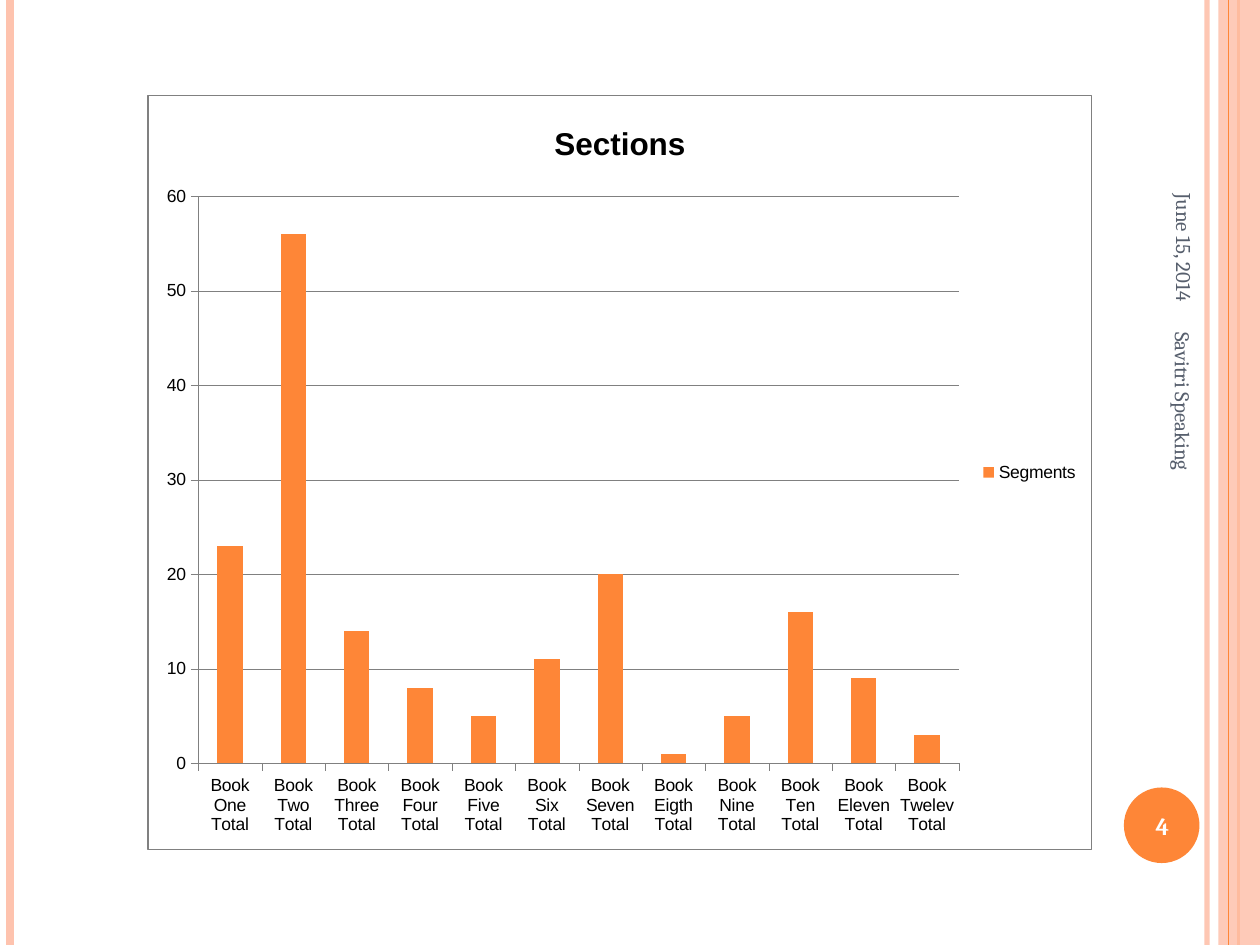
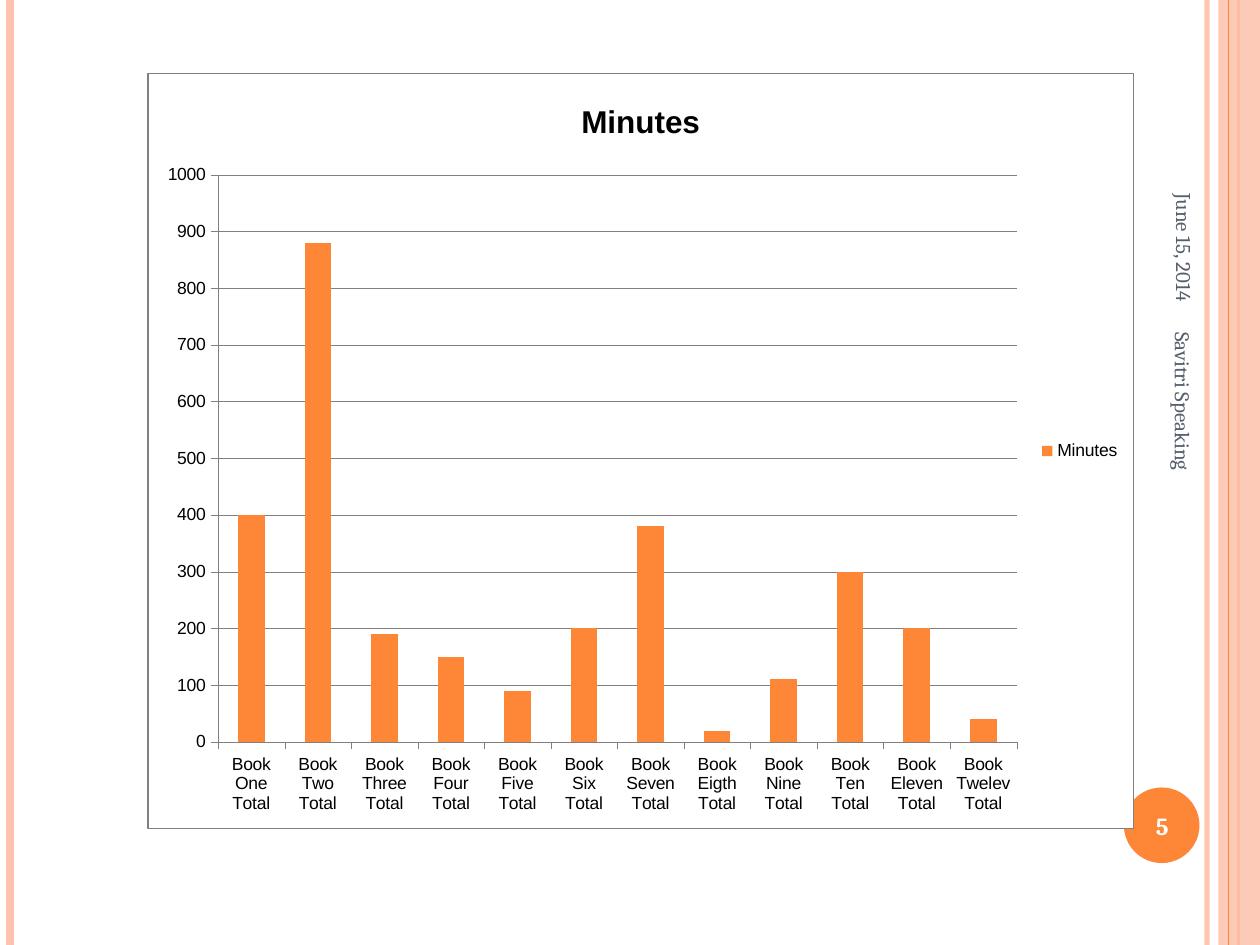
from dataclasses import dataclass

import lxml.etree
import pptx
import pptx.chart.data
import pptx.dml.color
import pptx.enum.chart
import pptx.enum.shapes
import pptx.enum.text
import pptx.oxml
import pptx.oxml.ns
import pptx.util

EMU_PER_PX = 9144
PAGE_WIDTH, PAGE_HEIGHT = 1000, 750


@dataclass(frozen=True)
class Theme:
    accent: str = "FE8637"
    band: str = "FEC3AE"
    muted: str = "575F6D"
    axis: str = "808080"
    white: str = "FFFFFF"
    black: str = "000000"
    text_font: str = "Cambria"
    chart_font: str = "Arial"
    footer_size: int = 12
    number_size: int = 14
    chart_size: int = 10
    chart_title_size: int = 18


THEME = Theme()
ALIGN = pptx.enum.text.PP_ALIGN
BOOKS = [f"Book {name} Total" for name in (
    "One", "Two", "Three", "Four", "Five", "Six",
    "Seven", "Eigth", "Nine", "Ten", "Eleven", "Twelev")]


def px(*lengths):
    return [pptx.util.Emu(length * EMU_PER_PX) for length in lengths]


def rgb(color):
    return pptx.dml.color.RGBColor.from_string(color)


def style_font(font, name, size, color, bold=False):
    font.name = name
    font.size = pptx.util.Pt(size)
    font.bold = bold
    font.color.rgb = rgb(color)


def style_line(line, color, width):
    line.color.rgb = rgb(color)
    line.width = pptx.util.Pt(width)


def set_opacity(properties, percent):
    color = properties.find(".//" + pptx.oxml.ns.qn("a:srgbClr"))
    alpha = lxml.etree.SubElement(color, pptx.oxml.ns.qn("a:alpha"))
    alpha.set("val", str(percent * 1000))


def add_stripe(page, x, color, width, opacity=100):
    stripe = page.shapes.add_connector(
        pptx.enum.shapes.MSO_CONNECTOR.STRAIGHT, *px(x, 0, x, PAGE_HEIGHT))
    style_line(stripe.line, color, width)
    properties = stripe._element.spPr
    if opacity < 100:
        set_opacity(properties, opacity)
    lxml.etree.SubElement(properties, pptx.oxml.ns.qn("a:effectLst"))


def add_filled_shape(page, kind, bounds, color, opacity=100):
    shape = page.shapes.add_shape(kind, *px(*bounds))
    shape.shadow.inherit = False
    shape.fill.solid()
    shape.fill.fore_color.rgb = rgb(color)
    shape.line.fill.background()
    if opacity < 100:
        set_opacity(shape._element.spPr, opacity)


def add_label(page, bounds, text, size, color, align, bold=False, rotation=0):
    box = page.shapes.add_textbox(*px(*bounds))
    box.rotation = rotation
    frame = box.text_frame
    frame.word_wrap = True
    frame.vertical_anchor = pptx.enum.text.MSO_ANCHOR.MIDDLE
    frame.text = text
    para = frame.paragraphs[0]
    para.alignment = align
    style_font(para.runs[0].font, THEME.text_font, size, color, bold)


def add_decoration(page):
    shapes = pptx.enum.shapes.MSO_SHAPE
    add_stripe(page, 958, THEME.band, 3, opacity=93)
    add_stripe(page, 8, THEME.band, 4.5)
    add_stripe(page, 983, THEME.accent, 1.5)
    add_filled_shape(page, shapes.RECTANGLE, (967, 0, 33, PAGE_HEIGHT), THEME.band, opacity=87)
    add_stripe(page, 975, THEME.accent, 0.75)
    add_filled_shape(page, shapes.OVAL, (892, 625, 60, 60), THEME.accent)


def add_footer(page, number):
    add_label(page, (830, 118, 220, 42), "June 15, 2014", THEME.footer_size,
              THEME.muted, ALIGN.RIGHT, rotation=90)
    add_label(page, (889, 627, 67, 57), str(number), THEME.number_size,
              THEME.white, ALIGN.CENTER, bold=True)
    add_label(page, (764, 409, 350, 40), "Savitri Speaking", THEME.footer_size,
              THEME.muted, ALIGN.LEFT, rotation=90)


def area_properties(outline):
    return pptx.oxml.parse_xml(
        f'<c:spPr {pptx.oxml.ns.nsdecls("c", "a")}><a:solidFill>'
        f'<a:srgbClr val="{THEME.white}"/></a:solidFill>{outline}</c:spPr>')


def paint_chart_areas(chart):
    border = (f'<a:ln w="{pptx.util.Pt(0.75)}"><a:solidFill>'
              f'<a:srgbClr val="{THEME.axis}"/></a:solidFill></a:ln>')
    body = chart._chartSpace.chart
    body.addnext(area_properties(border))
    body.plotArea.append(area_properties("<a:ln><a:noFill/></a:ln>"))


def style_axis(axis):
    axis.major_tick_mark = pptx.enum.chart.XL_TICK_MARK.OUTSIDE
    axis.minor_tick_mark = pptx.enum.chart.XL_TICK_MARK.NONE
    style_line(axis.format.line, THEME.axis, 0.05)


def add_book_chart(page, bounds, title, series_name, values, maximum, step):
    data = pptx.chart.data.CategoryChartData()
    data.categories = BOOKS
    data.add_series(series_name, values)
    chart = page.shapes.add_chart(
        pptx.enum.chart.XL_CHART_TYPE.COLUMN_CLUSTERED, *px(*bounds), data).chart
    style_font(chart.font, THEME.chart_font, THEME.chart_size, THEME.black)

    chart.has_title = True
    heading = chart.chart_title
    heading.include_in_layout = False
    heading.text_frame.text = title
    style_font(heading.text_frame.paragraphs[0].runs[0].font, THEME.chart_font,
               THEME.chart_title_size, THEME.black, bold=True)

    chart.has_legend = True
    chart.legend.position = pptx.enum.chart.XL_LEGEND_POSITION.RIGHT
    chart.legend.include_in_layout = False

    plot = chart.plots[0]
    plot.vary_by_categories = False
    plot.gap_width = 150
    bars = plot.series[0].format
    bars.fill.solid()
    bars.fill.fore_color.rgb = rgb(THEME.accent)

    for axis in (chart.category_axis, chart.value_axis):
        style_axis(axis)
    scale = chart.value_axis
    scale.minimum_scale = 0
    scale.maximum_scale = maximum
    scale.major_unit = step
    scale.has_major_gridlines = True
    style_line(scale.major_gridlines.format.line, THEME.axis, 0.05)
    paint_chart_areas(chart)


def add_chart_page(deck, number, **chart_settings):
    page = deck.slides.add_slide(deck.slide_layouts[6])
    page.background.fill.solid()
    page.background.fill.fore_color.rgb = rgb(THEME.white)
    add_decoration(page)
    add_book_chart(page, **chart_settings)
    add_footer(page, number)


def main():
    deck = pptx.Presentation()
    deck.slide_width, deck.slide_height = px(PAGE_WIDTH, PAGE_HEIGHT)
    add_chart_page(deck, 4, bounds=(117, 75, 750, 600), title="Sections",
                   series_name="Segments", maximum=60, step=10,
                   values=(23, 56, 14, 8, 5, 11, 20, 1, 5, 16, 9, 3))
    add_chart_page(deck, 5, bounds=(117, 58, 783, 600), title="Minutes",
                   series_name="Minutes", maximum=1000, step=100,
                   values=(400, 880, 190, 150, 90, 200, 380, 20, 110, 300, 200, 40))
    deck.save("out.pptx")


if __name__ == "__main__":
    main()
